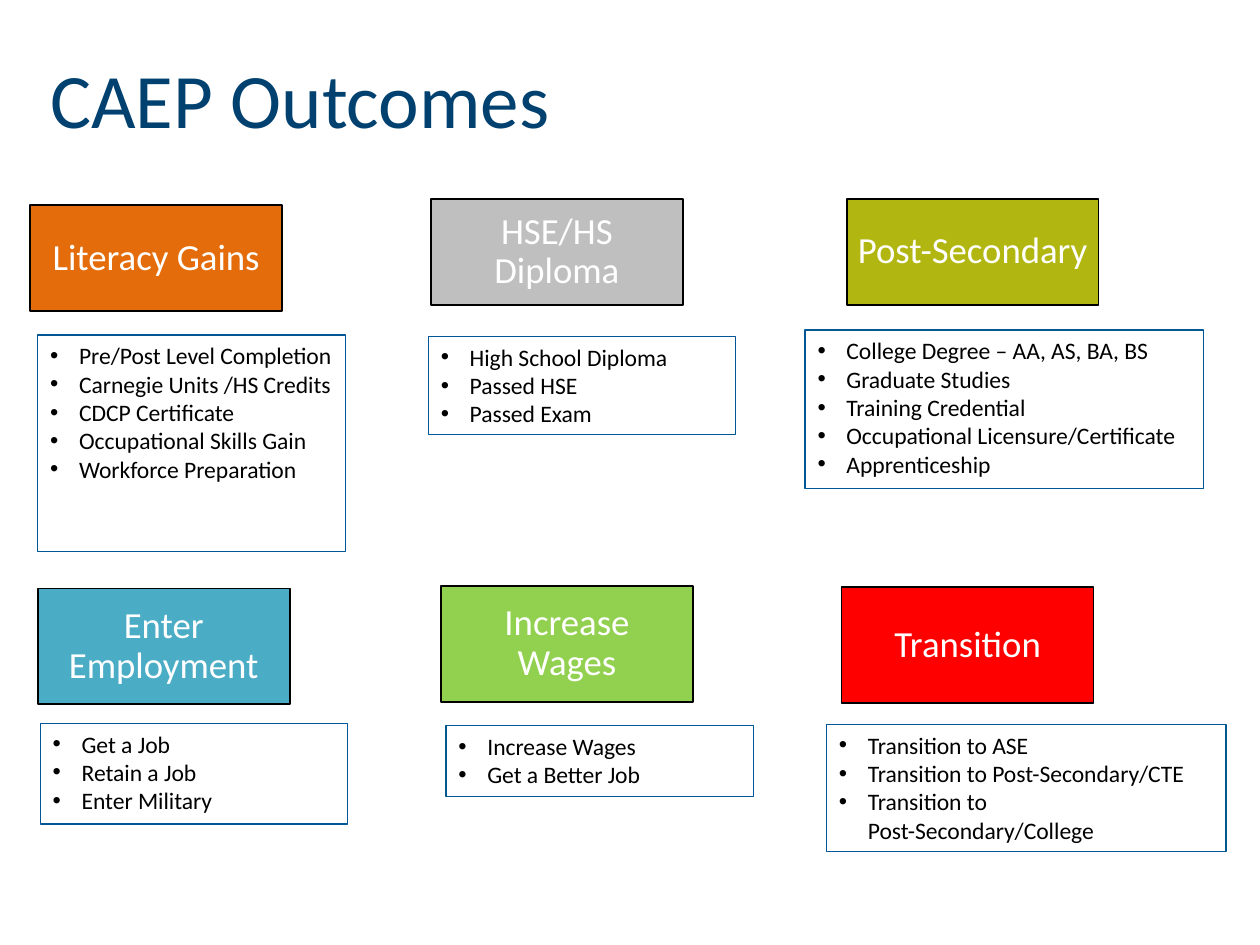
from lxml import etree
from pptx import Presentation
from pptx.dml.color import RGBColor
from pptx.enum import shapes, text
from pptx.oxml import ns
from pptx.util import Inches, Pt

FONT = "Calibri"
COLORS = {
    "title": "004170", "outline": "005796", "black": "000000", "white": "FFFFFF",
    "orange": "E46C0A", "gray": "BFBFBF", "olive": "B2B610",
    "teal": "4BACC6", "green": "92D050", "red": "FF0000",
}
HEADING_WIDTH = 2
INDENT = 0.23
OUTCOMES = [
    ("Literacy Gains", "orange", (0.24, 1.63, 0.84), (0.3, 2.66, 2.44, 1.72),
     ["Pre/Post Level Completion", "Carnegie Units /HS Credits", "CDCP Certificate",
      "Occupational Skills Gain", "Workforce Preparation"]),
    ("HSE/HS Diploma", "gray", (3.42, 1.58, 0.84), (3.4, 2.67, 2.44, 0.78),
     ["High School Diploma", "Passed HSE", "Passed Exam"]),
    ("Post-Secondary", "olive", (6.72, 1.58, 0.84), (6.39, 2.62, 3.16, 1.26),
     ["College Degree – AA, AS, BA, BS", "Graduate Studies", "Training Credential",
      "Occupational Licensure/Certificate", "Apprenticeship"]),
    ("Enter Employment", "teal", (0.3, 4.67, 0.92), (0.32, 5.74, 2.44, 0.8),
     ["Get a Job", "Retain a Job", "Enter Military"]),
    ("Increase Wages", "green", (3.5, 4.65, 0.92), (3.54, 5.76, 2.44, 0.56),
     ["Increase Wages", "Get a Better Job"]),
    ("Transition", "red", (6.68, 4.66, 0.92), (6.56, 5.75, 3.17, 1.01),
     ["Transition to ASE", "Transition to Post-Secondary/CTE",
      "Transition to Post-Secondary/College"]),
]


def rgb(name):
    """Return the named palette colour."""
    return RGBColor.from_string(COLORS[name])


def style_text(paragraph, size, color, align):
    """Set the font and alignment of a paragraph."""
    paragraph.alignment = align
    for run in paragraph.runs:
        run.font.name = FONT
        run.font.size = Pt(size)
        run.font.color.rgb = rgb(color)


def add_bullet(paragraph):
    """Give a paragraph a hanging round bullet."""
    properties = paragraph._p.get_or_add_pPr()
    properties.set("marL", str(Inches(INDENT)))
    properties.set("indent", str(-Inches(INDENT)))
    etree.SubElement(properties, ns.qn("a:buFont")).set("typeface", "Arial")
    etree.SubElement(properties, ns.qn("a:buChar")).set("char", "•")


def add_box(slide, left, top, width, height, line, line_width):
    """Add an outlined, unfilled rectangle with wrapped text."""
    box = slide.shapes.add_shape(
        shapes.MSO_SHAPE.RECTANGLE,
        Inches(left), Inches(top), Inches(width), Inches(height))
    box.shadow.inherit = False
    box.fill.background()
    box.line.color.rgb = rgb(line)
    box.line.width = Pt(line_width)
    box.text_frame.word_wrap = True
    return box


def add_heading(slide, label, color, left, top, height):
    """Add the coloured rectangle that names an outcome."""
    heading = add_box(slide, left, top, HEADING_WIDTH, height, "black", 1)
    heading.fill.solid()
    heading.fill.fore_color.rgb = rgb(color)
    frame = heading.text_frame
    frame.margin_left = frame.margin_right = Inches(0.08)
    frame.vertical_anchor = text.MSO_ANCHOR.MIDDLE
    frame.text = label
    frame.paragraphs[0].line_spacing = 0.9
    style_text(frame.paragraphs[0], 21, "white", text.PP_ALIGN.CENTER)


def add_measures(slide, measures, left, top, width, height):
    """Add the outlined bullet list of an outcome's measures."""
    frame = add_box(slide, left, top, width, height, "outline", 0.75).text_frame
    frame.vertical_anchor = text.MSO_ANCHOR.TOP
    frame.text = "\n".join(measures)
    for paragraph in frame.paragraphs:
        add_bullet(paragraph)
        style_text(paragraph, 13.5, "black", text.PP_ALIGN.LEFT)


def set_title(slide, wording):
    """Place and format the slide title."""
    title = slide.shapes.title
    title.left, title.top = Inches(0.3), Inches(0.36)
    title.width, title.height = Inches(6.59), Inches(0.87)
    frame = title.text_frame
    frame.text = wording
    frame.auto_size = text.MSO_AUTO_SIZE.NONE
    frame.vertical_anchor = text.MSO_ANCHOR.TOP
    style_text(frame.paragraphs[0], 44, "title", text.PP_ALIGN.LEFT)


def main():
    """Build and save the outcomes slide."""
    presentation = Presentation()
    presentation.slide_width = Inches(10)
    presentation.slide_height = Inches(7.5)
    slide = presentation.slides.add_slide(presentation.slide_layouts[5])
    set_title(slide, "CAEP Outcomes")
    for label, color, heading_place, measures_place, measures in OUTCOMES:
        add_heading(slide, label, color, *heading_place)
        add_measures(slide, measures, *measures_place)
    presentation.save("out.pptx")


if __name__ == "__main__":
    main()
